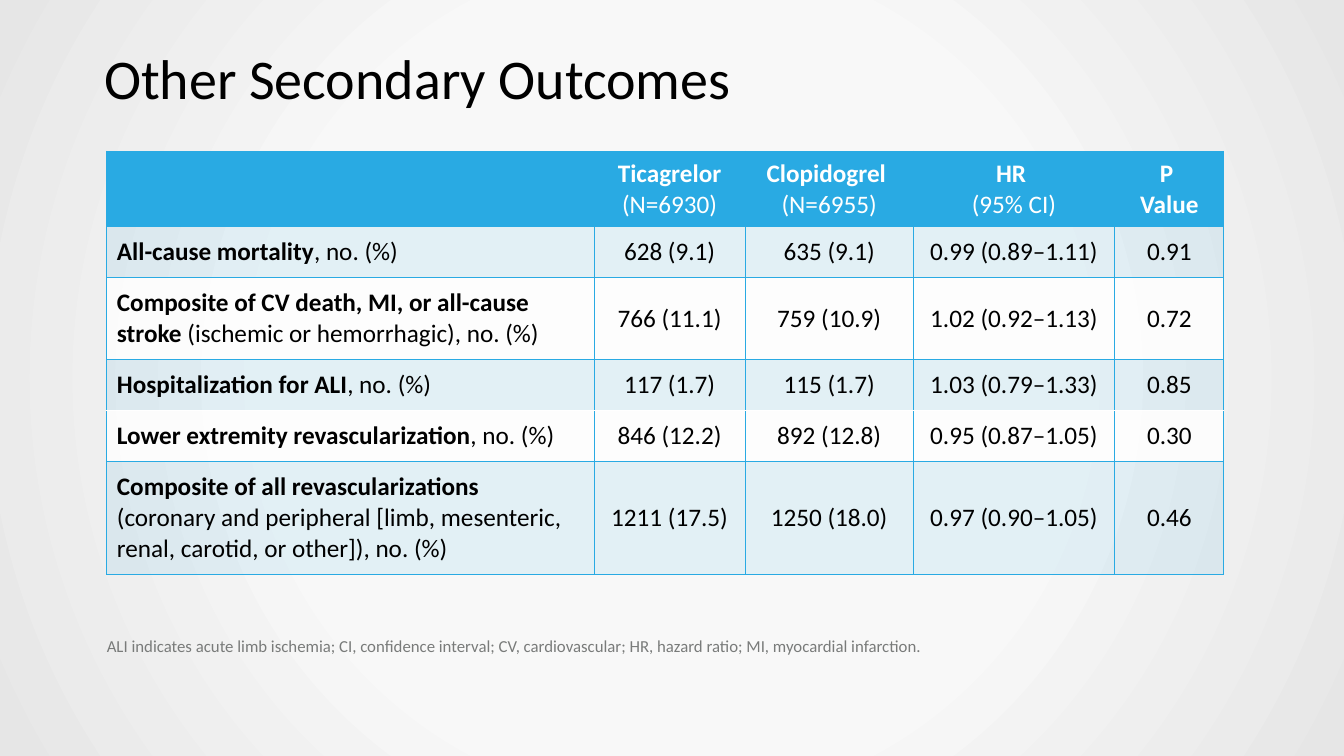
from lxml.etree import SubElement
from pptx import Presentation
from pptx.dml.color import RGBColor
from pptx.enum.text import MSO_ANCHOR, PP_ALIGN
from pptx.oxml import parse_xml
from pptx.oxml.ns import nsdecls, qn
from pptx.util import Pt

FONT = "Calibri"
BLUE, WHITE, BLACK, GRAY = "29AAE3", "FFFFFF", "000000", "797B7A"
LEFT, TABLE_TOP = 76.3, 108
COLUMN_WIDTHS = [348, 108, 120, 144, 78]
HEADER_HEIGHT, LINE_HEIGHT, PADDING = 54, 22, 7.2
WHITE_RULE_AFTER = 3

# Header cells and row labels pair a bold part with a regular part.
HEADERS = [
    ("", ""),
    ("Ticagrelor ", "(N=6930)"),
    ("Clopidogrel \n", "(N=6955)"),
    ("HR \n", "(95% CI)"),
    ("P \nValue", ""),
]
# Each outcome: label, number of label lines, values.
OUTCOMES = [
    (("All-cause mortality", ", no. (%)"), 1,
     ["628 (9.1)", "635 (9.1)", "0.99 (0.89–1.11)", "0.91"]),
    (("Composite of CV death, MI, or all-cause stroke",
      " (ischemic or hemorrhagic), no. (%)"), 2,
     ["766 (11.1)", "759 (10.9)", "1.02 (0.92–1.13)", "0.72"]),
    (("Hospitalization for ALI", ", no. (%)"), 1,
     ["117 (1.7)", "115 (1.7)", "1.03 (0.79–1.33)", "0.85"]),
    (("Lower extremity revascularization", ", no. (%)"), 1,
     ["846 (12.2)", "892 (12.8)", "0.95 (0.87–1.05)", "0.30"]),
    (("Composite of all revascularizations \n",
      "(coronary and peripheral [limb, mesenteric, renal, carotid, or other]), no. (%)"), 3,
     ["1211 (17.5)", "1250 (18.0)", "0.97 (0.90–1.05)", "0.46"]),
]


def color(hex_string):
    return RGBColor.from_string(hex_string)


def style_font(font, size, hex_string, bold=False):
    font.name, font.size, font.bold = FONT, Pt(size), bold
    font.color.rgb = color(hex_string)


def paint_background(page):
    """Fill the page with a circular gradient, lightest in the middle."""
    page.background.fill.gradient()
    gradient = page.element.find(".//" + qn("a:gradFill"))
    stops = "".join(
        f'<a:gs pos="{position}"><a:srgbClr val="{shade}"/></a:gs>'
        for position, shade in [(0, "F8F8F8"), (50000, "F8F8F8"), (100000, "E6E6E6")])
    gradient.getparent().replace(gradient, parse_xml(
        f'<a:gradFill {nsdecls("a")} rotWithShape="1"><a:gsLst>{stops}</a:gsLst>'
        '<a:path path="circle"><a:fillToRect l="50000" t="50000" r="50000" b="50000"/>'
        '</a:path></a:gradFill>'))


def fill_frame(box, text, size, hex_string, insets):
    frame = box.text_frame
    frame.word_wrap = True
    frame.vertical_anchor = MSO_ANCHOR.TOP
    (frame.margin_left, frame.margin_top,
     frame.margin_right, frame.margin_bottom) = [Pt(inset) for inset in insets]
    frame.text = text
    para = frame.paragraphs[0]
    para.alignment = PP_ALIGN.LEFT
    para.line_spacing = 0.9
    style_font(para.runs[0].font, size, hex_string)


def add_title(page, text):
    title = page.shapes.title
    title.left, title.top, title.width, title.height = Pt(60), Pt(33), Pt(816), Pt(90)
    fill_frame(title, text, 40, BLACK, (14.4, 3.6, 7.2, 3.6))


def add_footnote(page, text):
    box = page.shapes.add_textbox(Pt(LEFT), Pt(456), Pt(sum(COLUMN_WIDTHS)), Pt(13.5))
    fill_frame(box, text, 12, GRAY, (0, 0, 0, 0))


def write_cell(cell, parts, hex_string, padding, alignment):
    cell.vertical_anchor = MSO_ANCHOR.MIDDLE
    cell.margin_left = cell.margin_right = Pt(7.2)
    cell.margin_top = cell.margin_bottom = Pt(padding)
    para = cell.text_frame.paragraphs[0]
    para.alignment = alignment
    para.line_spacing = Pt(LINE_HEIGHT)
    for part, bold in zip(parts, (True, False)):
        for number, line in enumerate(part.split("\n")):
            if number:
                para.add_line_break()
            if line:
                span = para.add_run()
                span.text = line
                style_font(span.font, 18, hex_string, bold)


def paint_cell(cell, hex_string, opacity, top=BLUE, bottom=BLUE):
    """Set the fill with its opacity in percent, and the four borders."""
    cell.fill.solid()
    cell.fill.fore_color.rgb = color(hex_string)
    properties = cell._tc.get_or_add_tcPr()
    if opacity < 100:
        SubElement(properties.find(".//" + qn("a:srgbClr")), qn("a:alpha"),
                   val=str(opacity * 1000))
    borders = [("L", BLUE), ("R", BLUE), ("T", top), ("B", bottom)]
    for position, (side, line_color) in enumerate(borders):
        properties.insert(position, parse_xml(
            f'<a:ln{side} {nsdecls("a")} w="{Pt(0.75)}"><a:solidFill>'
            f'<a:srgbClr val="{line_color}"/></a:solidFill></a:ln{side}>'))


def add_outcome_table(page):
    heights = [HEADER_HEIGHT] + [
        lines * LINE_HEIGHT + 2 * PADDING for _, lines, _ in OUTCOMES]
    table = page.shapes.add_table(
        len(heights), len(COLUMN_WIDTHS), Pt(LEFT), Pt(TABLE_TOP),
        Pt(sum(COLUMN_WIDTHS)), Pt(sum(heights))).table
    for column, width in zip(table.columns, COLUMN_WIDTHS):
        column.width = Pt(width)
    for row, height in zip(table.rows, heights):
        row.height = Pt(height)

    for cell, parts in zip(table.rows[0].cells, HEADERS):
        write_cell(cell, parts, WHITE, 0, PP_ALIGN.CENTER)
        paint_cell(cell, BLUE, 100)

    for number, (label, _, values) in enumerate(OUTCOMES, start=1):
        fill, opacity = (BLUE, 10) if number % 2 else (WHITE, 80)
        top = WHITE if number == WHITE_RULE_AFTER + 1 else BLUE
        bottom = WHITE if number == WHITE_RULE_AFTER else BLUE
        contents = [label] + [("", value) for value in values]
        for column, parts in enumerate(contents):
            cell = table.cell(number, column)
            alignment = PP_ALIGN.CENTER if column else PP_ALIGN.LEFT
            write_cell(cell, parts, BLACK, PADDING, alignment)
            paint_cell(cell, fill, opacity, top, bottom)


def main():
    deck = Presentation()
    deck.slide_width, deck.slide_height = Pt(960), Pt(540)
    page = deck.slides.add_slide(deck.slide_layouts.get_by_name("Title Only"))
    paint_background(page)
    add_title(page, "Other Secondary Outcomes")
    add_outcome_table(page)
    add_footnote(page, "ALI indicates acute limb ischemia; CI, confidence interval; "
                       "CV, cardiovascular; HR, hazard ratio; MI, myocardial infarction.")
    deck.save("out.pptx")


if __name__ == "__main__":
    main()
